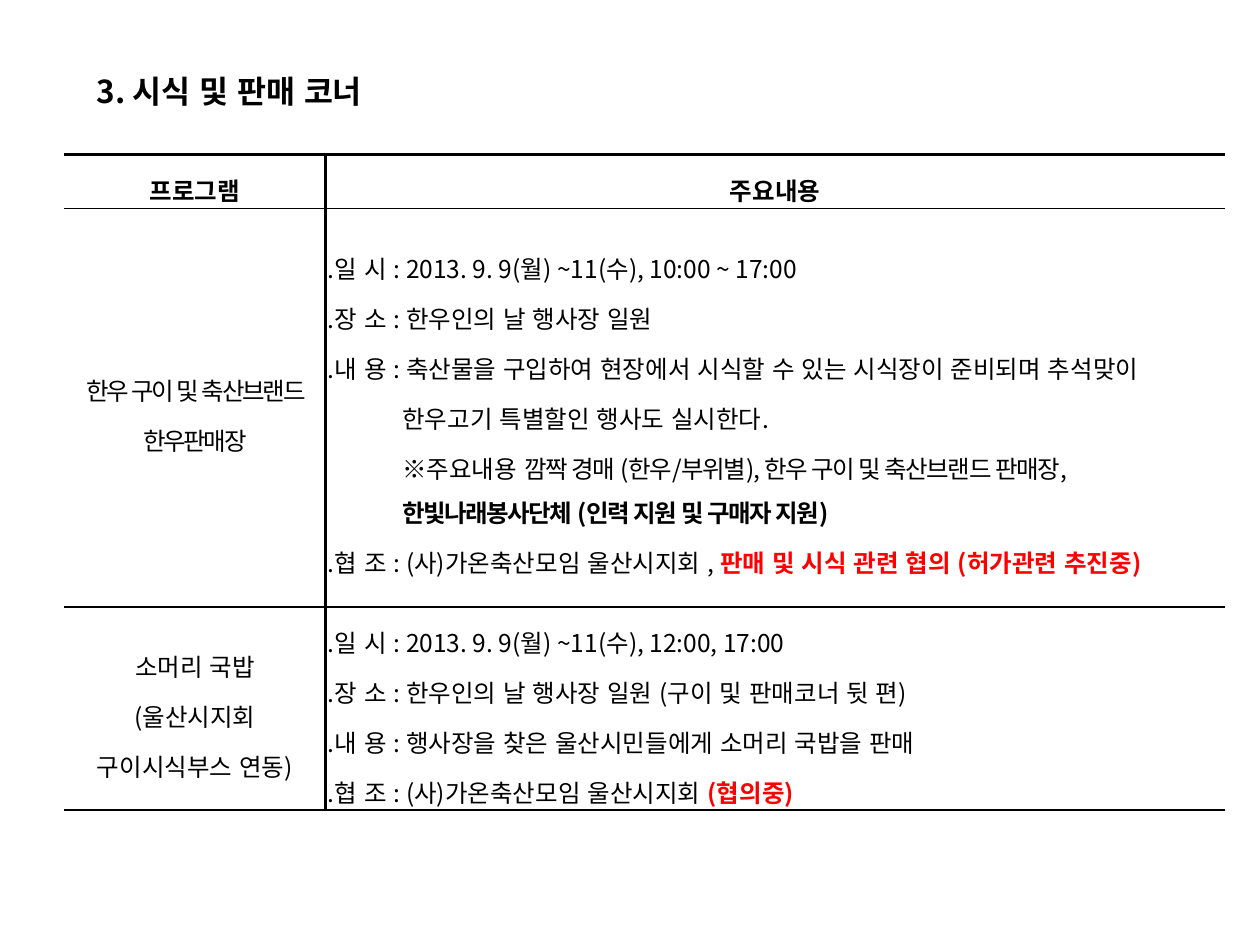
from lxml import etree
from pptx import Presentation
from pptx.dml.color import RGBColor
from pptx.enum.lang import MSO_LANGUAGE_ID
from pptx.enum.text import MSO_ANCHOR, MSO_AUTO_SIZE, PP_ALIGN
from pptx.oxml.ns import qn
from pptx.util import Cm, Pt

BLACK = RGBColor(0x00, 0x00, 0x00)
RED = RGBColor(0xFF, 0x00, 0x00)
FONT = "Noto Sans CJK KR"
KOREAN = MSO_LANGUAGE_ID.KOREAN
LEFT, CENTER, JUSTIFY = PP_ALIGN.LEFT, PP_ALIGN.CENTER, PP_ALIGN.JUSTIFY
MIDDLE = MSO_ANCHOR.MIDDLE
SHAPE_TO_FIT = MSO_AUTO_SIZE.SHAPE_TO_FIT_TEXT
NOTE_INDENT = Cm(1.5)
THIN, MEDIUM, THICK = Pt(0.25), Pt(1.13), Pt(1.7)

PLAIN = {"name": FONT, "size": Pt(14), "bold": False, "language_id": KOREAN}
BOLD = {**PLAIN, "bold": True}
TITLE = {**BOLD, "size": Pt(18)}


def add_run(paragraph, text, style=PLAIN, color=BLACK, spacing=0):
    run = paragraph.add_run()
    run.text = text
    for key, value in style.items():
        setattr(run.font, key, value)
    run.font.color.rgb = color
    properties = run.font._element
    etree.SubElement(properties, qn("a:ea"), typeface=FONT)
    if spacing:
        properties.set("spc", str(spacing))


def add_border(cell, side, width, position):
    line = etree.Element(qn(f"a:ln{side}"), w=str(int(width)))
    if width:
        fill = etree.SubElement(line, qn("a:solidFill"))
        etree.SubElement(fill, qn("a:srgbClr"), val=str(BLACK))
    else:
        etree.SubElement(line, qn("a:noFill"))
    cell._tc.get_or_add_tcPr().insert(position, line)


prs = Presentation()
prs.slide_width, prs.slide_height = Cm(25.4), Cm(19.05)
slide = prs.slides.add_slide(prs.slide_layouts[6])

heading = slide.shapes.add_textbox(Cm(1.7), Cm(1.32), Cm(6.68), Cm(1.02)).text_frame
heading.word_wrap = False
heading.auto_size = SHAPE_TO_FIT
add_run(heading.paragraphs[0], "3. 시식 및 판매 코너", TITLE)

programs = [
    [
        [(CENTER, 0, [("프로그램", BOLD)])],
        [(CENTER, 0, [("주요내용", BOLD)])],
    ],
    [
        [(CENTER, 0, [("한우 구이 및 축산브랜드 한우판매장", PLAIN, BLACK, -130)])],
        [
            (LEFT, 0, [(".일 시 : 2013. 9. 9(월) ~11(수), 10:00 ~ 17:00",)]),
            (LEFT, 0, [(".장 소 : 한우인의 날 행사장 일원",)]),
            (LEFT, 0, [(".내 용 : 축산물을 구입하여 현장에서 시식할 수 있는 시식장이 준비되며 추석맞이",)]),
            (LEFT, NOTE_INDENT, [("한우고기 특별할인 행사도 실시한다.",)]),
            (LEFT, NOTE_INDENT, [
                ("※주요내용 ",),
                ("깜짝 경매 (한우/부위별), 한우 구이 및 축산브랜드 판매장,", PLAIN, BLACK, -90),
            ]),
            (LEFT, NOTE_INDENT, [("한빛나래봉사단체 (인력 지원 및 구매자 지원)", BOLD, BLACK, -90)]),
            (LEFT, 0, [
                (".협 조 : (사)가온축산모임 울산시지회 , ",),
                ("판매 및 시식 관련 협의 (허가관련 추진중)", BOLD, RED),
            ]),
        ],
    ],
    [
        [
            (CENTER, 0, [("소머리 국밥",)]),
            (CENTER, 0, [("(울산시지회 구이시식부스 연동)",)]),
        ],
        [
            (JUSTIFY, 0, [(".일 시 : 2013. 9. 9(월) ~11(수), 12:00, 17:00",)]),
            (JUSTIFY, 0, [(".장 소 : 한우인의 날 행사장 일원 (구이 및 판매코너 뒷 편)",)]),
            (JUSTIFY, 0, [(".내 용 : 행사장을 찾은 울산시민들에게 소머리 국밥을 판매",)]),
            (LEFT, 0, [(".협 조 : (사)가온축산모임 울산시지회 ",), ("(협의중)", BOLD, RED)]),
        ],
    ],
]

schedule = slide.shapes.add_table(3, 2, Cm(1.3), Cm(3.12), Cm(23.39), Cm(13.21)).table
schedule.first_row = schedule.horz_banding = False
for column, width in zip(schedule.columns, (5.26, 18.13)):
    column.width = Cm(width)
for row, height in zip(schedule.rows, (1.07, 8.05, 4.09)):
    row.height = Cm(height)

cell_format = {
    "vertical_anchor": MIDDLE,
    "margin_left": Cm(0.05),
    "margin_right": Cm(0.05),
    "margin_top": Cm(0.05),
    "margin_bottom": Cm(0.05),
}
row_rules = [THICK, THIN, MEDIUM, THICK]
column_rules = [0, THICK, 0]

for r, program in enumerate(programs):
    for c, paragraphs in enumerate(program):
        cell = schedule.cell(r, c)
        for key, value in cell_format.items():
            setattr(cell, key, value)
        cell.fill.background()
        borders = zip("LRTB", column_rules[c:c + 2] + row_rules[r:r + 2])
        for position, (side, width) in enumerate(borders):
            add_border(cell, side, width, position)
        for i, (alignment, indent, runs) in enumerate(paragraphs):
            frame = cell.text_frame
            paragraph = frame.add_paragraph() if i else frame.paragraphs[0]
            paragraph.alignment = alignment
            paragraph.line_spacing = 1.4
            if indent:
                paragraph._p.get_or_add_pPr().set("marL", str(int(indent)))
            for run in runs:
                add_run(paragraph, *run)

sponsor = schedule.cell(1, 1).text_frame.paragraphs[5]
sponsor.line_spacing = 1.1
sponsor.space_before = Pt(2.9)

prs.save("out.pptx")
